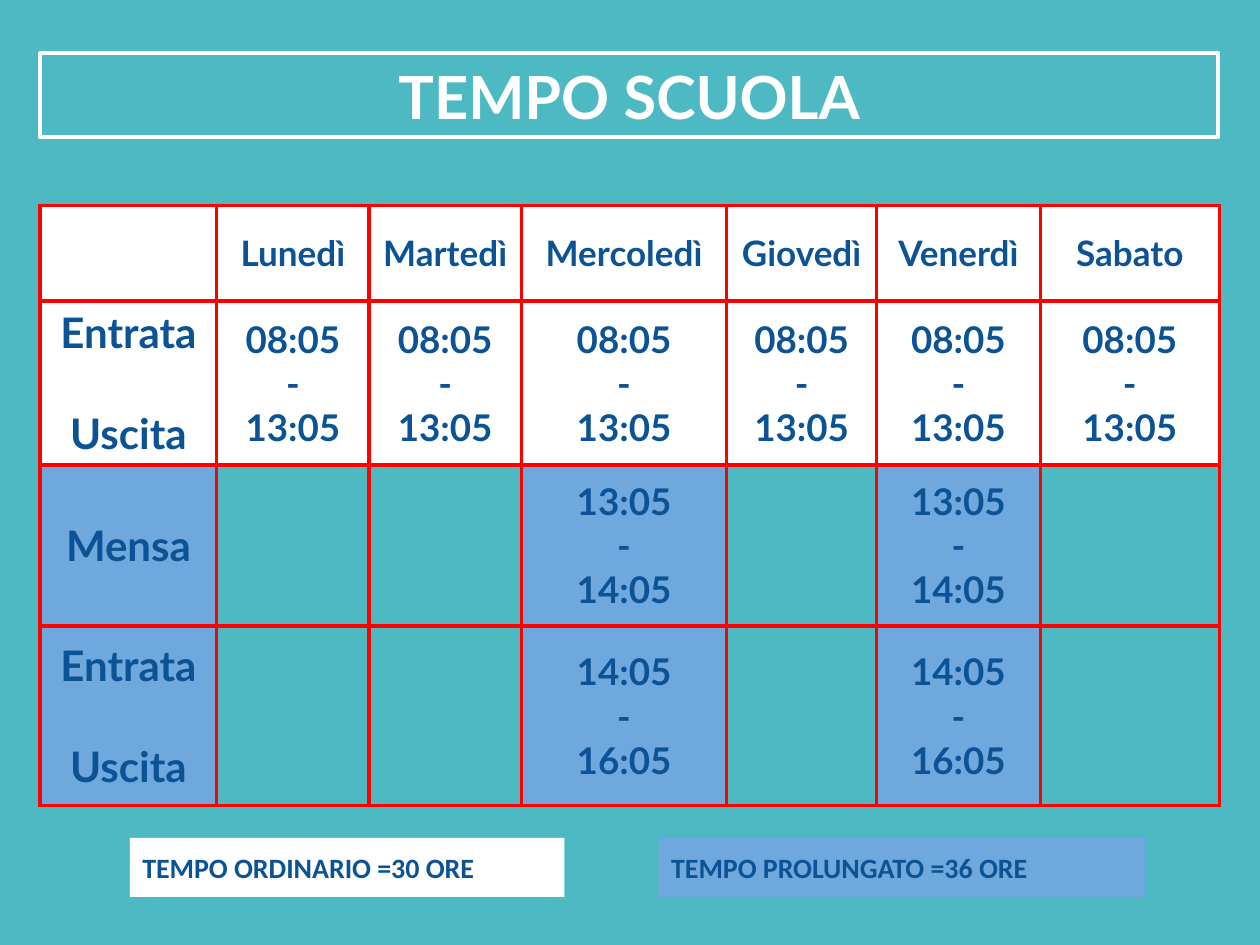
"""Build the weekly school timetable slide."""
from dataclasses import dataclass

from lxml import etree
from pptx import Presentation
from pptx.dml.color import RGBColor
from pptx.enum.shapes import MSO_SHAPE
from pptx.enum.text import MSO_ANCHOR, PP_ALIGN
from pptx.oxml.ns import qn
from pptx.slide import Slide
from pptx.table import _Cell
from pptx.text.text import TextFrame
from pptx.util import Cm, Pt

RECTANGLE = MSO_SHAPE.RECTANGLE
TOP, MIDDLE, BOTTOM = MSO_ANCHOR.TOP, MSO_ANCHOR.MIDDLE, MSO_ANCHOR.BOTTOM
LEFT, CENTER = PP_ALIGN.LEFT, PP_ALIGN.CENTER


@dataclass(frozen=True)
class Theme:
    background: str = "4CB9C3"
    ordinary: str = "FFFFFF"
    extended: str = "6FA8DC"
    text: str = "0B5394"
    border: str = "FE0000"
    heading_font: str = "Lato"
    legend_font: str = "Calibri"
    title_size: float = 34
    label_size: float = 24
    time_size: float = 21
    day_size: float = 20
    legend_size: float = 16
    line_width: float = 2.25


@dataclass(frozen=True)
class Box:
    text: str
    left: float
    top: float
    width: float
    height: float
    size: float
    font: str
    color: str
    fill: str | None = None
    line: str | None = None
    align: PP_ALIGN = LEFT
    anchor: MSO_ANCHOR = TOP
    vertical_margin: float = 0.25


@dataclass(frozen=True)
class Period:
    label: tuple[str, ...]
    times: tuple[str, ...]
    days: tuple[str, ...]
    fill: str
    height: float


THEME = Theme()
MARGIN = 0.81
HEADER_HEIGHT = 1.93
DAY_WIDTHS = {"Lunedì": 3.07, "Martedì": 3.07, "Mercoledì": 4.14,
              "Giovedì": 3.02, "Venerdì": 3.3, "Sabato": 3.61}
LABEL_WIDTH = 3.56
DAYS = tuple(DAY_WIDTHS)
LONG_DAYS = ("Mercoledì", "Venerdì")
ENTRY_EXIT = ("Entrata", "Uscita")

PERIODS = (
    Period(ENTRY_EXIT, ("08:05", "-", "13:05"), DAYS, THEME.ordinary, 3.29),
    Period(("Mensa",), ("13:05", "-", "14:05"), LONG_DAYS, THEME.extended, 3.25),
    Period(ENTRY_EXIT, ("14:05", "-", "16:05"), LONG_DAYS, THEME.extended, 3.61),
)

BOXES = (
    Box("TEMPO SCUOLA", MARGIN, 1.07, 23.75, 1.7, THEME.title_size,
        THEME.heading_font, THEME.ordinary, line=THEME.ordinary,
        align=CENTER, anchor=BOTTOM, vertical_margin=0.13),
    Box("TEMPO ORDINARIO =30 ORE", 2.62, 16.89, 8.76, 1.19, THEME.legend_size,
        THEME.legend_font, THEME.text, fill=THEME.ordinary),
    Box("TEMPO PROLUNGATO =36 ORE", 13.28, 16.89, 9.8, 1.19, THEME.legend_size,
        THEME.legend_font, THEME.text, fill=THEME.extended),
)


def write_text(frame: TextFrame, lines: tuple[str, ...], *, size: float,
               font: str = THEME.heading_font, color: str = THEME.text,
               align: PP_ALIGN = CENTER, gap: float = 0) -> None:
    """Write bold lines, one paragraph each, with a gap in points between them."""
    for index, line in enumerate(lines):
        paragraph = frame.add_paragraph() if index else frame.paragraphs[0]
        paragraph.alignment = align
        if index and gap:
            paragraph.space_before = Pt(gap)
        run = paragraph.add_run()
        run.text = line
        run.font.size = Pt(size)
        run.font.name = font
        run.font.bold = True
        run.font.color.rgb = RGBColor.from_string(color)


def draw_box(slide: Slide, box: Box) -> None:
    """Draw a rectangle with its text."""
    shape = slide.shapes.add_shape(RECTANGLE, Cm(box.left), Cm(box.top),
                                   Cm(box.width), Cm(box.height))
    shape.shadow.inherit = False
    if box.fill:
        shape.fill.solid()
        shape.fill.fore_color.rgb = RGBColor.from_string(box.fill)
    else:
        shape.fill.background()
    if box.line:
        shape.line.color.rgb = RGBColor.from_string(box.line)
        shape.line.width = Pt(THEME.line_width)
    else:
        shape.line.fill.background()
    frame = shape.text_frame
    frame.word_wrap = True
    frame.vertical_anchor = box.anchor
    frame.margin_left = frame.margin_right = Cm(0.25)
    frame.margin_top = frame.margin_bottom = Cm(box.vertical_margin)
    write_text(frame, (box.text,), size=box.size, font=box.font,
               color=box.color, align=box.align)


def format_cell(cell: _Cell, fill: str) -> None:
    """Give a cell its borders, fill and vertical alignment."""
    properties = cell._tc.get_or_add_tcPr()
    for side in ("a:lnL", "a:lnR", "a:lnT", "a:lnB"):
        line = etree.SubElement(properties, qn(side), w=str(Pt(THEME.line_width)))
        solid = etree.SubElement(line, qn("a:solidFill"))
        etree.SubElement(solid, qn("a:srgbClr"), val=THEME.border)
    cell.fill.solid()
    cell.fill.fore_color.rgb = RGBColor.from_string(fill)
    cell.vertical_anchor = MIDDLE


def draw_timetable(slide: Slide) -> None:
    """Draw the table of days and periods."""
    widths = (LABEL_WIDTH, *DAY_WIDTHS.values())
    heights = (HEADER_HEIGHT, *(period.height for period in PERIODS))
    table = slide.shapes.add_table(len(heights), len(widths), Cm(MARGIN), Cm(4.14),
                                   Cm(sum(widths)), Cm(sum(heights))).table
    table.first_row = table.horz_banding = False
    for column, width in zip(table.columns, widths):
        column.width = Cm(width)
    for row, height in zip(table.rows, heights):
        row.height = Cm(height)

    format_cell(table.cell(0, 0), THEME.ordinary)
    for column_index, day in enumerate(DAYS, 1):
        cell = table.cell(0, column_index)
        format_cell(cell, THEME.ordinary)
        write_text(cell.text_frame, (day,), size=THEME.day_size)

    for row_index, period in enumerate(PERIODS, 1):
        label = table.cell(row_index, 0)
        format_cell(label, period.fill)
        write_text(label.text_frame, period.label, size=THEME.label_size,
                   gap=THEME.label_size * 1.2)
        for column_index, day in enumerate(DAYS, 1):
            cell = table.cell(row_index, column_index)
            active = day in period.days
            format_cell(cell, period.fill if active else THEME.background)
            if active:
                write_text(cell.text_frame, period.times, size=THEME.time_size)


def main() -> None:
    """Build and save the presentation."""
    presentation = Presentation()
    presentation.slide_width, presentation.slide_height = Cm(25.4), Cm(19.05)
    slide = presentation.slides.add_slide(presentation.slide_layouts[6])
    slide.background.fill.solid()
    slide.background.fill.fore_color.rgb = RGBColor.from_string(THEME.background)
    draw_timetable(slide)
    for box in BOXES:
        draw_box(slide, box)
    presentation.save("out.pptx")


if __name__ == "__main__":
    main()
